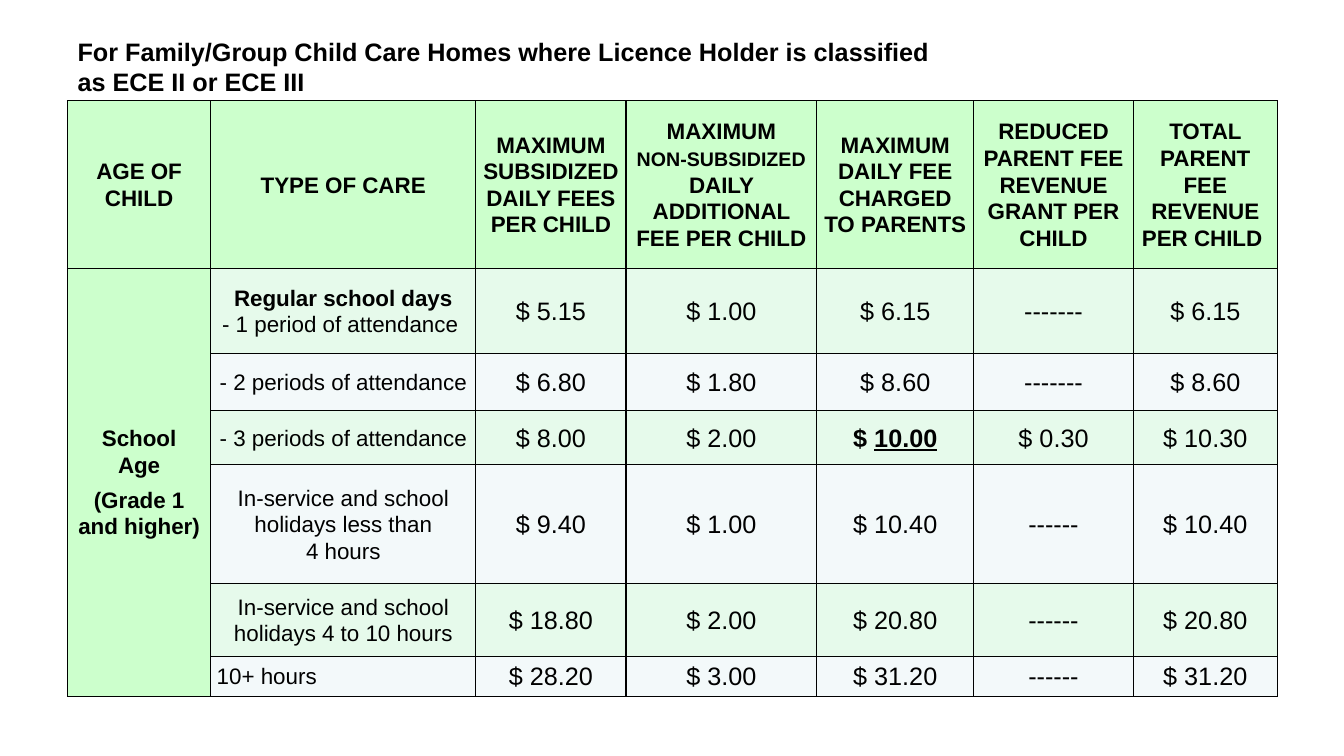
import dataclasses

import pptx
import pptx.dml.color
import pptx.enum.text
import pptx.oxml
import pptx.oxml.ns
import pptx.util

EMU_PER_PX = 9144
FONT = "Arial"
BLACK = "000000"
HEADER_FILL = "CCFFCC"
ROW_FILLS = ("E6FAEB", "F3F9FA")
CENTER = pptx.enum.text.PP_ALIGN.CENTER
LEFT = pptx.enum.text.PP_ALIGN.LEFT

COLUMN_WIDTHS = (142, 263, 149, 189, 156, 158, 143)
ROW_HEIGHTS = (166, 85, 56, 54, 118, 72, 40)


@dataclasses.dataclass(frozen=True)
class TextRun:
    text: str
    size: int = 16
    bold: bool = False
    underline: bool = False


@dataclasses.dataclass(frozen=True)
class TextParagraph:
    runs: tuple[TextRun, ...]
    align: pptx.enum.text.PP_ALIGN = CENTER
    space_after: int = 0
    line_spacing: float = 1.07


@dataclasses.dataclass(frozen=True)
class CareRow:
    care: TextParagraph
    amounts: tuple[str, ...]


def px(length: int) -> pptx.util.Emu:
    return pptx.util.Emu(length * EMU_PER_PX)


def color(value: str) -> pptx.dml.color.RGBColor:
    return pptx.dml.color.RGBColor.from_string(value)


def header(text: str, space_after: int = 0) -> TextParagraph:
    return TextParagraph((TextRun(text, bold=True),), space_after=space_after)


def care(text: str, align: pptx.enum.text.PP_ALIGN = CENTER) -> TextParagraph:
    return TextParagraph((TextRun(text),), align)


def amount(text: str) -> TextParagraph:
    return TextParagraph((TextRun(text, 18),))


HEADERS = (
    header("AGE OF CHILD"),
    header("TYPE OF CARE"),
    header("MAXIMUM SUBSIDIZED DAILY FEES PER CHILD"),
    TextParagraph((
        TextRun("MAXIMUM\n", bold=True),
        TextRun("NON-SUBSIDIZED", 14, bold=True),
        TextRun(" DAILY ADDITIONAL FEE PER CHILD", bold=True),
    )),
    header("MAXIMUM DAILY FEE CHARGED TO PARENTS"),
    header("REDUCED PARENT FEE REVENUE GRANT PER CHILD"),
    header("TOTAL PARENT FEE REVENUE PER CHILD "),
)
AGE_GROUP = (header("School"), header("Age", 6), header("(Grade 1 and higher)"))
HIGHLIGHT = TextParagraph((
    TextRun("$ ", 18, bold=True),
    TextRun("10.00", 18, bold=True, underline=True),
))
HIGHLIGHT_AMOUNT = "$ 10.00"
CARE_ROWS = (
    CareRow(
        TextParagraph((
            TextRun("Regular school days\n", bold=True),
            TextRun("- 1 period of attendance "),
        )),
        ("$ 5.15", "$ 1.00", "$ 6.15", "-------", "$ 6.15"),
    ),
    CareRow(care("- 2 periods of attendance "),
            ("$ 6.80", "$ 1.80", "$ 8.60", "-------", "$ 8.60")),
    CareRow(care("- 3 periods of attendance"),
            ("$ 8.00", "$ 2.00", HIGHLIGHT_AMOUNT, "$ 0.30", "$ 10.30")),
    CareRow(care("In-service and school holidays less than\n4 hours"),
            ("$ 9.40", "$ 1.00", "$ 10.40", "------", "$ 10.40")),
    CareRow(care("In-service and school holidays 4 to 10 hours"),
            ("$ 18.80", "$ 2.00", "$ 20.80", "------", "$ 20.80")),
    CareRow(care("10+ hours", LEFT),
            ("$ 28.20", "$ 3.00", "$ 31.20", "------", "$ 31.20")),
)
TITLE = TextParagraph(
    (TextRun("For Family/Group Child Care Homes where Licence Holder is "
             "classified as ECE II or ECE III", 18, bold=True),),
    LEFT, line_spacing=1.0,
)


def write_paragraphs(text_frame: pptx.text.text.TextFrame,
                     contents: tuple[TextParagraph, ...]) -> None:
    for index, content in enumerate(contents):
        paragraph = text_frame.add_paragraph() if index else text_frame.paragraphs[0]
        paragraph.alignment = content.align
        paragraph.line_spacing = content.line_spacing
        paragraph.space_before = pptx.util.Pt(0)
        paragraph.space_after = pptx.util.Pt(content.space_after)
        for text_run in content.runs:
            for line_number, line in enumerate(text_run.text.split("\n")):
                if line_number:
                    paragraph.add_line_break()
                if not line:
                    continue
                run = paragraph.add_run()
                run.text = line
                run.font.name = FONT
                run.font.size = pptx.util.Pt(text_run.size)
                run.font.bold = text_run.bold
                run.font.underline = text_run.underline
                run.font.color.rgb = color(BLACK)


def style_cell(cell: pptx.table._Cell, fill: str) -> None:
    properties = cell._tc.get_or_add_tcPr()
    for side in ("lnL", "lnR", "lnT", "lnB"):
        properties.append(pptx.oxml.parse_xml(
            f'<a:{side} {pptx.oxml.ns.nsdecls("a")} w="12700"><a:solidFill>'
            f'<a:srgbClr val="{BLACK}"/></a:solidFill></a:{side}>'
        ))
    cell.fill.solid()
    cell.fill.fore_color.rgb = color(fill)
    cell.margin_left = cell.margin_right = px(6)
    cell.margin_top = cell.margin_bottom = px(0)
    cell.vertical_anchor = pptx.enum.text.MSO_ANCHOR.MIDDLE


def add_title(slide: pptx.slide.Slide) -> None:
    title = slide.shapes.title
    title.left, title.top, title.width, title.height = px(67), px(33), px(878), px(93)
    text_frame = title.text_frame
    text_frame.word_wrap = True
    text_frame.auto_size = pptx.enum.text.MSO_AUTO_SIZE.NONE
    text_frame.vertical_anchor = pptx.enum.text.MSO_ANCHOR.TOP
    text_frame.margin_left = text_frame.margin_right = px(10)
    text_frame.margin_top = px(3)
    write_paragraphs(text_frame, (TITLE,))


def add_fee_table(slide: pptx.slide.Slide) -> None:
    table = slide.shapes.add_table(
        len(ROW_HEIGHTS), len(COLUMN_WIDTHS), px(67), px(100),
        px(sum(COLUMN_WIDTHS)), px(sum(ROW_HEIGHTS)),
    ).table
    table.first_row = False
    table.horz_banding = False
    for column, width in zip(table.columns, COLUMN_WIDTHS):
        column.width = px(width)
    for row, height in zip(table.rows, ROW_HEIGHTS):
        row.height = px(height)
    for row_index, row in enumerate(table.rows):
        for column_index, cell in enumerate(row.cells):
            is_header = row_index == 0 or column_index == 0
            style_cell(cell, HEADER_FILL if is_header else ROW_FILLS[(row_index - 1) % 2])

    for column_index, content in enumerate(HEADERS):
        write_paragraphs(table.cell(0, column_index).text_frame, (content,))
    table.cell(1, 0).merge(table.cell(len(CARE_ROWS), 0))
    write_paragraphs(table.cell(1, 0).text_frame, AGE_GROUP)
    for row_index, care_row in enumerate(CARE_ROWS, 1):
        write_paragraphs(table.cell(row_index, 1).text_frame, (care_row.care,))
        for column_index, value in enumerate(care_row.amounts, 2):
            content = HIGHLIGHT if value == HIGHLIGHT_AMOUNT else amount(value)
            write_paragraphs(table.cell(row_index, column_index).text_frame, (content,))


def main() -> None:
    presentation = pptx.Presentation()
    presentation.slide_width, presentation.slide_height = px(1333), px(750)
    slide = presentation.slides.add_slide(presentation.slide_layouts[5])
    add_title(slide)
    add_fee_table(slide)
    presentation.save("out.pptx")


if __name__ == "__main__":
    main()
